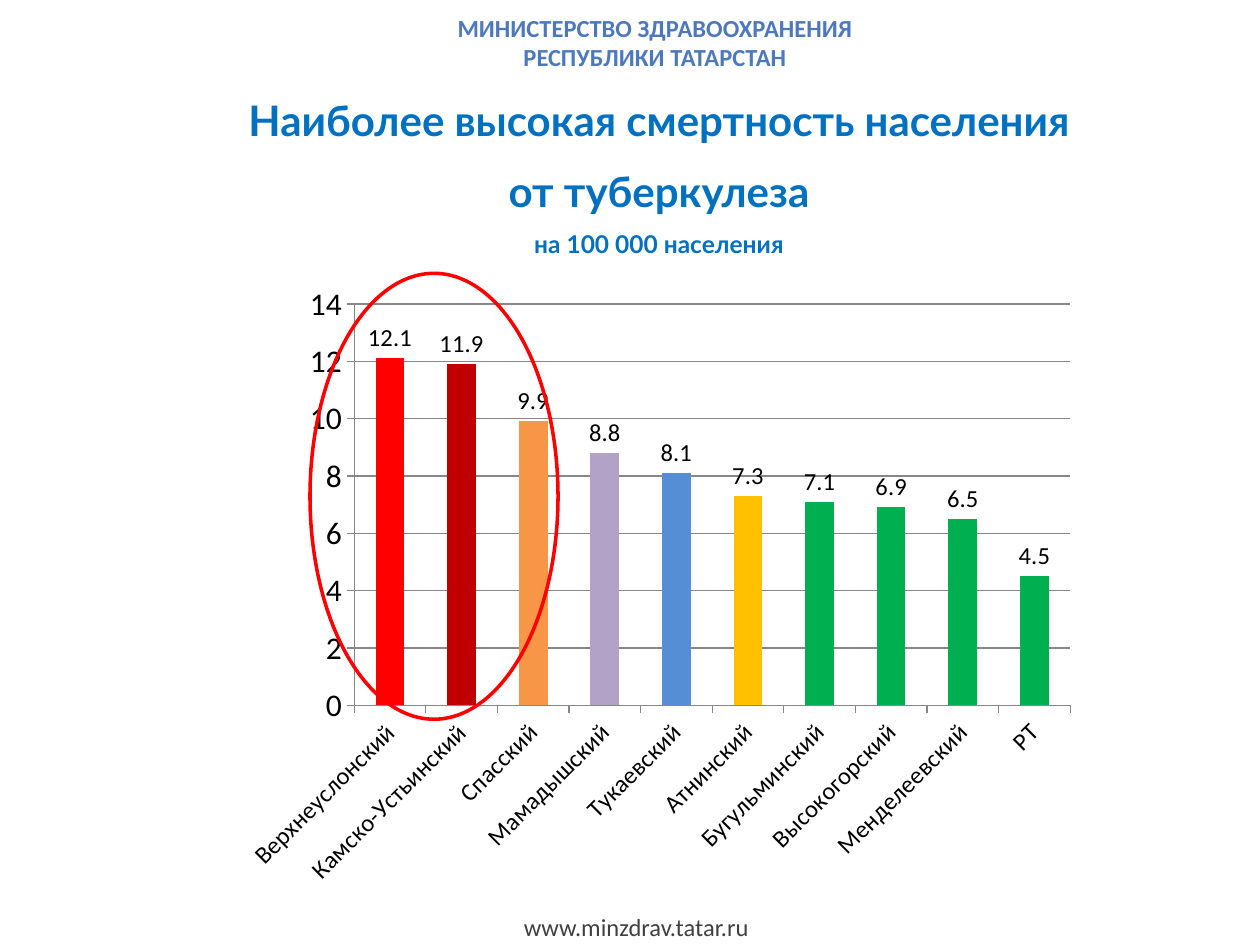
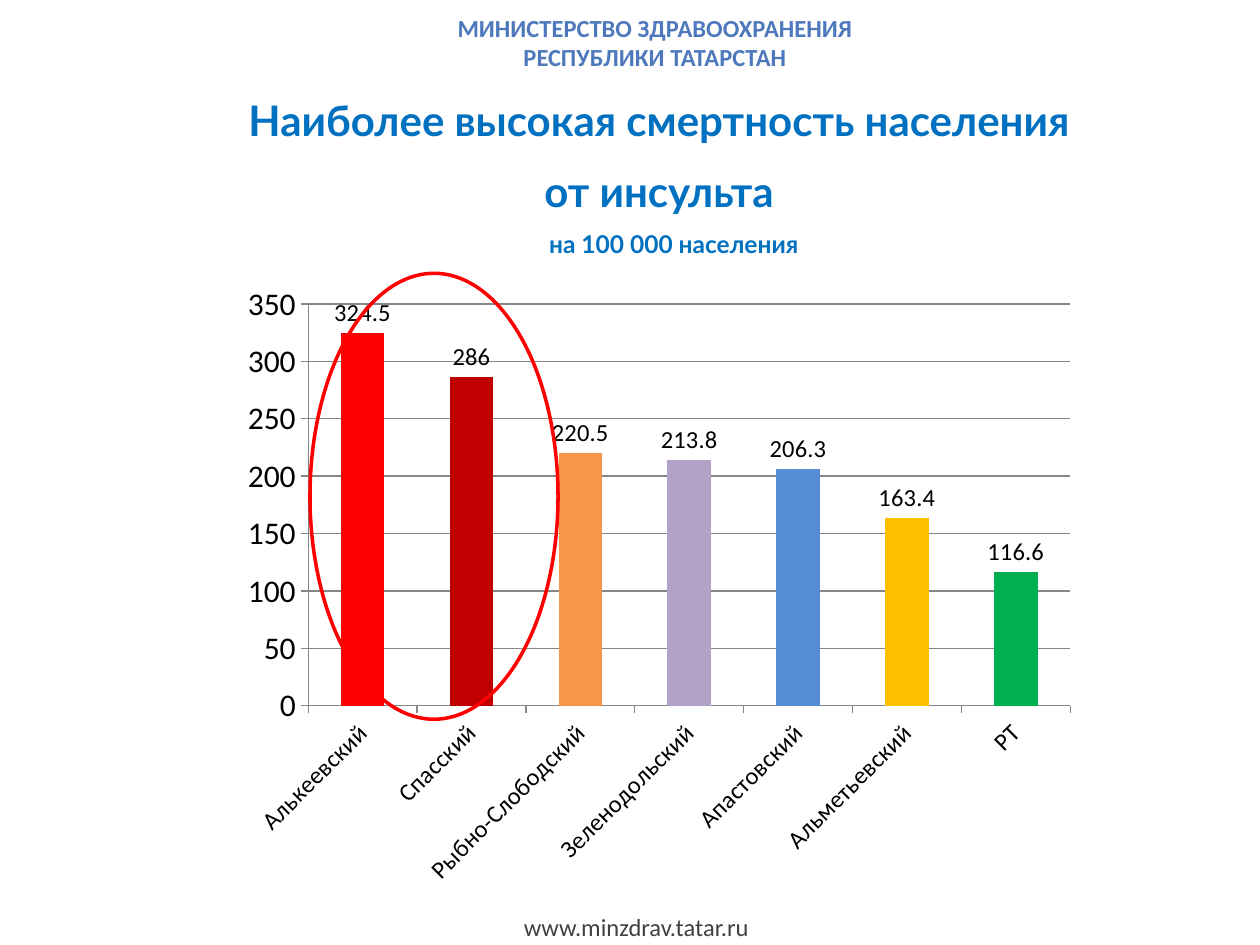
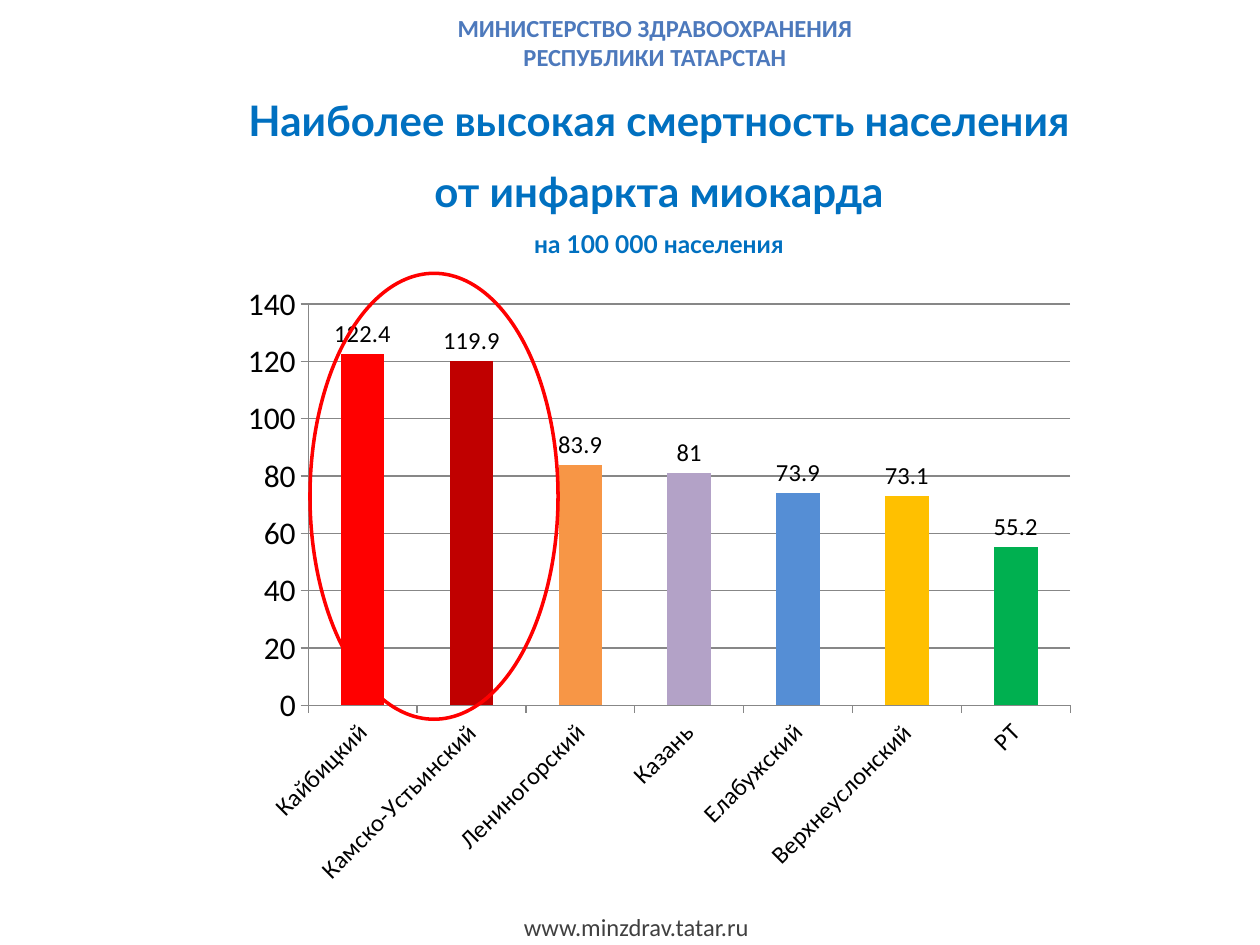
from pptx import Presentation
from pptx.chart.data import CategoryChartData
from pptx.dml.color import RGBColor
from pptx.enum.chart import XL_CHART_TYPE, XL_LABEL_POSITION, XL_TICK_MARK
from pptx.enum.shapes import MSO_SHAPE
from pptx.enum.text import MSO_ANCHOR, MSO_AUTO_SIZE, PP_ALIGN
from pptx.util import Cm, Pt

BLACK = RGBColor(0x00, 0x00, 0x00)
BLUE = RGBColor(0x00, 0x70, 0xC0)
HEADER_BLUE = RGBColor(0x4D, 0x79, 0xBC)
FOOTER_GREY = RGBColor(0x40, 0x40, 0x40)
AXIS_GREY = RGBColor(0x87, 0x87, 0x87)
RED = RGBColor(0xFF, 0x00, 0x00)
GREEN = RGBColor(0x00, 0xB0, 0x50)
LEADING_COLOURS = [
    RED,
    RGBColor(0xC0, 0x00, 0x00),
    RGBColor(0xF7, 0x96, 0x46),
    RGBColor(0xB3, 0xA2, 0xC7),
    RGBColor(0x55, 0x8E, 0xD5),
    RGBColor(0xFF, 0xC0, 0x00),
]

# Cause of death, indent of the unit line, rate by district
CAUSES = [
    ("от туберкулеза", Cm(0), {
        "Верхнеуслонский": 12.1, "Камско-Устьинский": 11.9, "Спасский": 9.9,
        "Мамадышский": 8.8, "Тукаевский": 8.1, "Атнинский": 7.3,
        "Бугульминский": 7.1, "Высокогорский": 6.9, "Менделеевский": 6.5,
        "РТ": 4.5}),
    ("от инсульта", Cm(0.6), {
        "Алькеевский": 324.5, "Спасский": 286, "Рыбно-Слободский": 220.5,
        "Зеленодольский": 213.8, "Апастовский": 206.3,
        "Альметьевский": 163.4, "РТ": 116.6}),
    ("от инфаркта миокарда", Cm(0), {
        "Кайбицкий": 122.4, "Камско-Устьинский": 119.9, "Лениногорский": 83.9,
        "Казань": 81, "Елабужский": 73.9, "Верхнеуслонский": 73.1,
        "РТ": 55.2}),
]


def style_font(font, name, size, colour, bold=False):
    font.name = name
    font.size = Pt(size)
    font.color.rgb = colour
    font.bold = bold


def add_layout_text(page, layout, lines, place, colour, bold, align):
    """Write a text box and hand it to the layout, so every slide shows it."""
    box = page.shapes.add_textbox(*place)
    box.text_frame.word_wrap = False
    box.text_frame.text = lines
    for para in box.text_frame.paragraphs:
        para.alignment = align
        for span in para.runs:
            style_font(span.font, "Calibri", 14, colour, bold)
    layout.shapes.element.append(box.element)


deck = Presentation()
deck.slide_width, deck.slide_height = Cm(25.4), Cm(19.05)
layout = deck.slide_layouts[5]

for number, (cause, indent, rates) in enumerate(CAUSES):
    page = deck.slides.add_slide(layout)

    # Shared header and footer
    if number == 0:
        add_layout_text(page, layout, "www.minzdrav.tatar.ru",
                        (Cm(10.31), Cm(18.26), Cm(5.08), Cm(0.86)),
                        FOOTER_GREY, False, PP_ALIGN.LEFT)
        add_layout_text(page, layout,
                        "МИНИСТЕРСТВО ЗДРАВООХРАНЕНИЯ\nРЕСПУБЛИКИ ТАТАРСТАН",
                        (Cm(8.94), Cm(0.13), Cm(8.53), Cm(1.45)),
                        HEADER_BLUE, True, PP_ALIGN.CENTER)

    # Title
    title = page.shapes.title
    title.left, title.top = Cm(1.78), Cm(1.78)
    title.width, title.height = Cm(23.01), Cm(3.71)
    frame = title.text_frame
    frame.text = ("Наиболее высокая смертность населения\n"
                  f"{cause}\nна 100 000 населения")
    frame.word_wrap = True
    frame.auto_size = MSO_AUTO_SIZE.NONE
    frame.vertical_anchor = MSO_ANCHOR.TOP
    for para, size, space in zip(frame.paragraphs, (24, 24, 14), (0, 12, 7)):
        para.alignment = PP_ALIGN.CENTER
        para.space_before = Pt(space)
        for span in para.runs:
            style_font(span.font, "Lato", size, BLUE, True)
    if indent:
        frame.paragraphs[-1].element.get_or_add_pPr().set("marL", str(indent)) if hasattr(
            frame.paragraphs[-1], "element") else frame.paragraphs[-1]._p.get_or_add_pPr().set(
            "marL", str(indent))

    # Column chart
    data = CategoryChartData()
    data.categories = list(rates)
    data.add_series("Series 1", list(rates.values()))
    chart = page.shapes.add_chart(
        XL_CHART_TYPE.COLUMN_CLUSTERED,
        Cm(4.65), Cm(5.49), Cm(17.27), Cm(12.6), data).chart
    style_font(chart.font, "Calibri", 18, BLACK)
    chart.has_legend = False
    chart.has_title = False

    for axis in (chart.category_axis, chart.value_axis):
        axis.major_tick_mark = XL_TICK_MARK.OUTSIDE
        axis.format.line.color.rgb = AXIS_GREY
    chart.value_axis.major_gridlines.format.line.color.rgb = AXIS_GREY
    style_font(chart.category_axis.tick_labels.font, "Calibri", 14, BLACK)
    chart.element.xpath("//c:catAx/c:txPr/a:bodyPr")[0].set("rot", "-2700000")

    plot = chart.plots[0]
    plot.gap_width = 150
    plot.vary_by_categories = False
    series = plot.series[0]
    series.format.fill.solid()
    series.format.fill.fore_color.rgb = GREEN
    for index, colour in enumerate(LEADING_COLOURS):
        fill = series.points[index].format.fill
        fill.solid()
        fill.fore_color.rgb = colour
    labels = series.data_labels
    labels.show_value = True
    labels.position = XL_LABEL_POSITION.OUTSIDE_END
    style_font(labels.font, "Calibri", 14, BLACK)

    # Ring around the worst districts
    ring = page.shapes.add_shape(
        MSO_SHAPE.OVAL, Cm(6.25), Cm(5.51), Cm(5), Cm(8.99))
    ring.shadow.inherit = False
    ring.fill.background()
    ring.line.color.rgb = RED
    ring.line.width = Pt(2)

deck.save("out.pptx")
